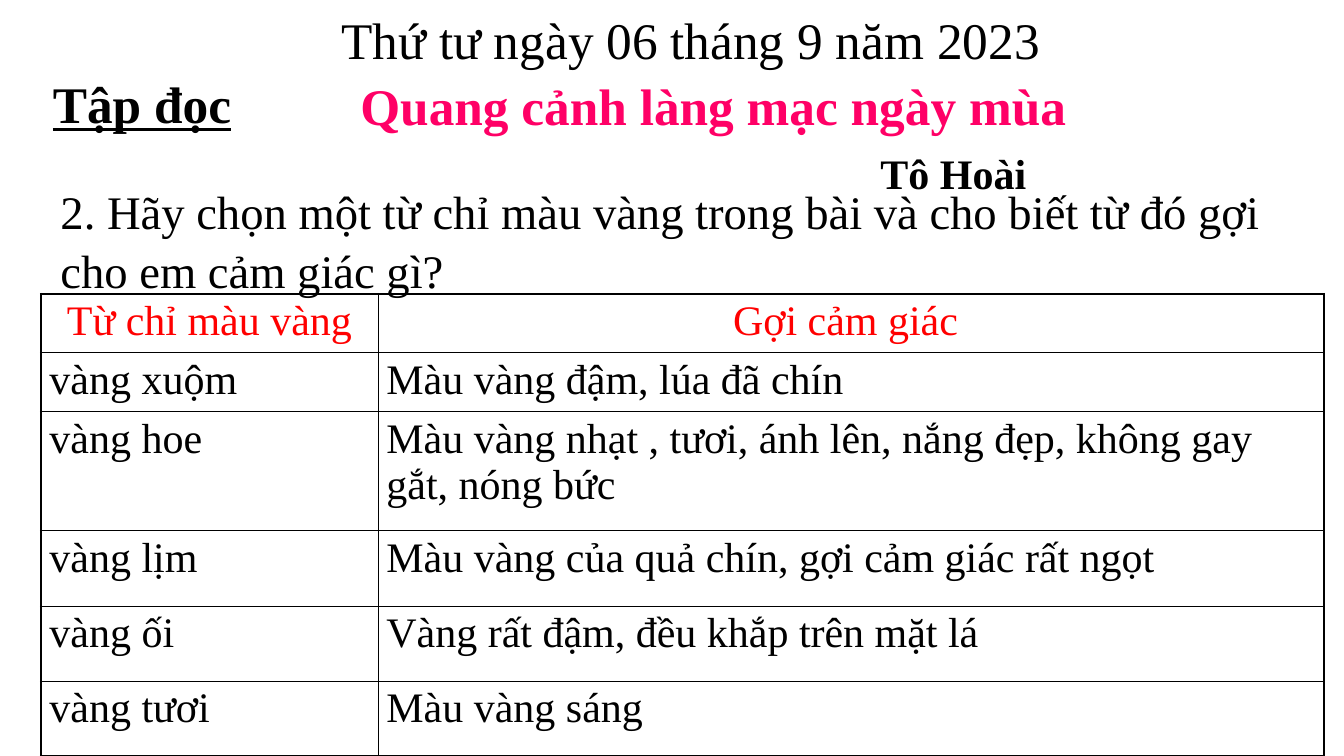
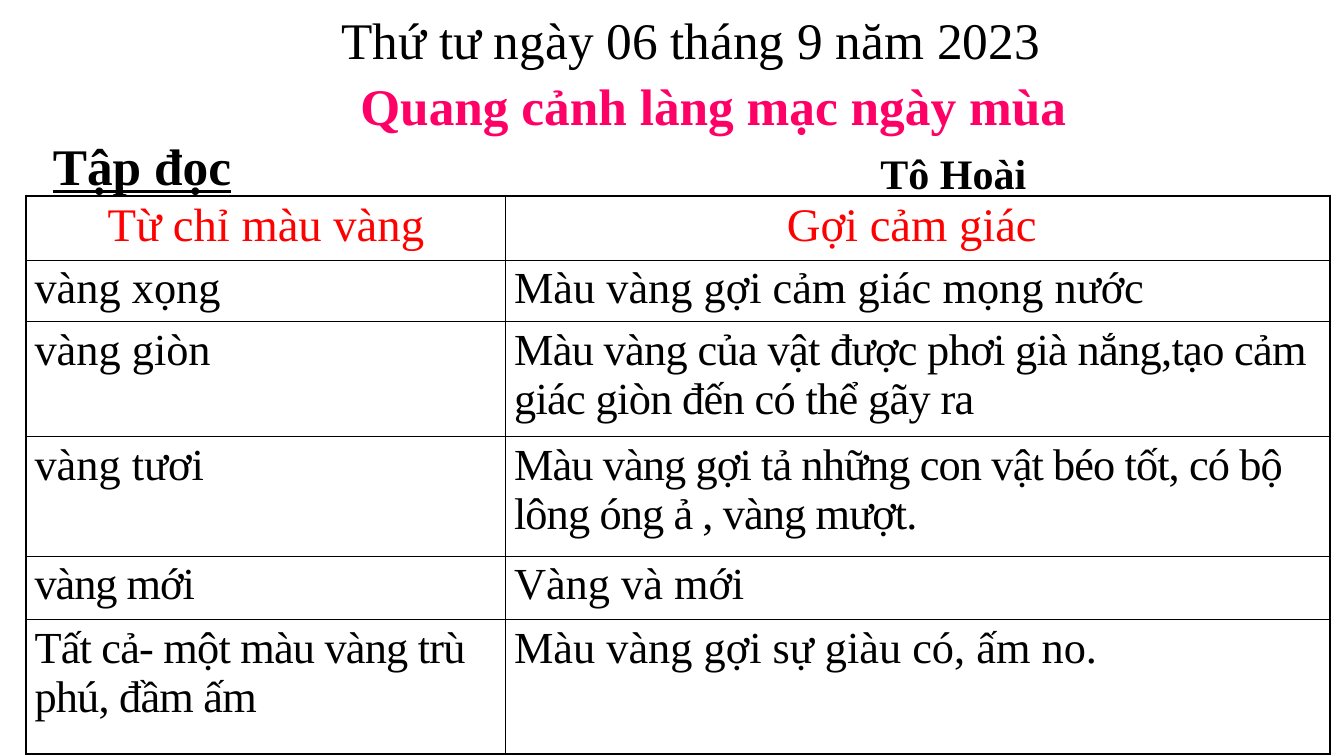
"""Build two Vietnamese reading-lesson slides, each with a heading and a word table."""
from lxml.etree import SubElement as Sub
from pptx import Presentation
from pptx.dml.color import RGBColor
from pptx.enum.text import PP_ALIGN as Align
from pptx.oxml.ns import qn
from pptx.util import Cm, Pt

FONT = "Times New Roman"
BLACK = RGBColor(0, 0, 0)
PINK = RGBColor(0xFF, 0, 0x66)
RED = RGBColor(0xFF, 0, 0)
THIN, THICK = Pt(1), Pt(2.25)
HEAD = ("Từ chỉ màu vàng", "Gợi cảm giác ")


def style(para, size, color=BLACK, bold=False, align=Align.LEFT):
    para.alignment = align
    font = para.font
    font.name, font.size, font.bold = FONT, Pt(size), bold
    font.color.rgb = color


def add_box(slide, place, pad, lines):
    frame = slide.shapes.add_textbox(*map(Cm, place)).text_frame
    frame.word_wrap = True
    frame.margin_left = frame.margin_right = Cm(pad)
    frame.margin_top = frame.margin_bottom = Cm(pad / 2)
    frame.text = "\n".join(text for text, *_ in lines)
    for para, (_, *look) in zip(frame.paragraphs, lines):
        style(para, *look)
        para.line_spacing = 1.05
    return frame.paragraphs


pages = [
    dict(
        task="2. Hãy chọn một từ chỉ màu vàng trong bài và cho biết từ đó gợi cho em cảm giác gì?",
        drop=0, high=4.06, place=(1.24, 8.89), cols=(10.19, 28.6),
        tall=(1.78, 1.78, 3.6, 2.28, 2.27, 2.28), sizes=(36, 36), tight={},
        rows=[
            ("vàng xuộm", "Màu vàng đậm, lúa đã chín"),
            ("vàng hoe", "Màu vàng nhạt , tươi, ánh lên, nắng đẹp, không gay gắt, nóng bức"),
            ("vàng lịm", "Màu vàng của quả chín, gợi cảm giác rất ngọt"),
            ("vàng ối", "Vàng rất đậm, đều khắp trên mặt lá"),
            ("vàng tươi", "Màu vàng sáng"),
        ],
    ),
    dict(
        task=None,
        drop=53, high=5.94, place=(0.79, 5.92), cols=(14.5, 24.92),
        tall=(1.88, 1.83, 3.45, 3.61, 1.93, 4.06), sizes=(40, 38),
        tight={(2, 1): -60, (3, 1): -80, (4, 0): -90, (5, 0): -70},
        rows=[
            ("vàng xọng", "Màu vàng gợi cảm giác mọng nước"),
            ("vàng giòn", "Màu vàng của vật được phơi già nắng,tạo cảm giác giòn đến có thể gãy ra"),
            ("vàng tươi", "Màu vàng gợi tả những con vật béo tốt, có bộ lông óng ả , vàng mượt."),
            ("vàng mới", "Vàng và mới"),
            ("Tất cả- một màu vàng trù phú, đầm ấm", "Màu vàng gợi sự giàu có, ấm no."),
        ],
    ),
]

deck = Presentation()
deck.slide_width, deck.slide_height = Cm(40.64), Cm(22.86)

for page in pages:
    slide = deck.slides.add_slide(deck.slide_layouts[6])
    _, author = add_box(slide, (9.73, 2.01, 23.7, 4.06), 0.3, [
        ("Quang cảnh làng mạc ngày mùa", 44, PINK, True, Align.CENTER),
        ("Tô Hoài", 36, BLACK, True, Align.CENTER),
    ])
    author.space_before = Pt(8)
    author._p.get_or_add_pPr().set("marL", str(Cm(14.5)))
    if page["task"]:
        add_box(slide, (1.47, 5.28, 38.3, 3.78), 0.36, [(page["task"], 40)])

    rows = [HEAD, *page["rows"]]
    cols, tall = page["cols"], page["tall"]
    left, top = page["place"]
    grid = slide.shapes.add_table(
        len(rows), len(cols), Cm(left), Cm(top), Cm(sum(cols)), Cm(sum(tall))).table
    grid.first_row = grid.horz_banding = False
    for col, width in zip(grid.columns, cols):
        col.width = Cm(width)
    for y, (row, height) in enumerate(zip(rows, tall)):
        grid.rows[y].height = Cm(height)
        for x, text in enumerate(row):
            cell = grid.cell(y, x)
            cell.text = text
            para = cell.text_frame.paragraphs[0]
            if y == 0:
                style(para, page["sizes"][0], RED, align=Align.CENTER)
            else:
                style(para, page["sizes"][1])
            if (y, x) in page["tight"]:
                para.runs[0].font._element.set("spc", str(page["tight"][y, x]))
            props = cell._tc.get_or_add_tcPr()
            edges = {"lnL": x == 0, "lnR": x == len(cols) - 1,
                     "lnT": y == 0, "lnB": y == len(rows) - 1}
            for tag, outer in edges.items():
                line = Sub(props, qn("a:" + tag), w=str(THICK if outer else THIN))
                Sub(Sub(line, qn("a:solidFill")), qn("a:srgbClr"), val=str(BLACK))
            cell.fill.background()

    _, topic = add_box(slide, (1.3, 0, 39.2, page["high"]), 0.3, [
        ("Thứ tư ngày 06 tháng 9 năm 2023", 44, BLACK, False, Align.CENTER),
        ("Tập đọc", 44, BLACK, True),
    ])
    topic.font.underline = True
    topic.space_before = Pt(page["drop"])

deck.save("out.pptx")
